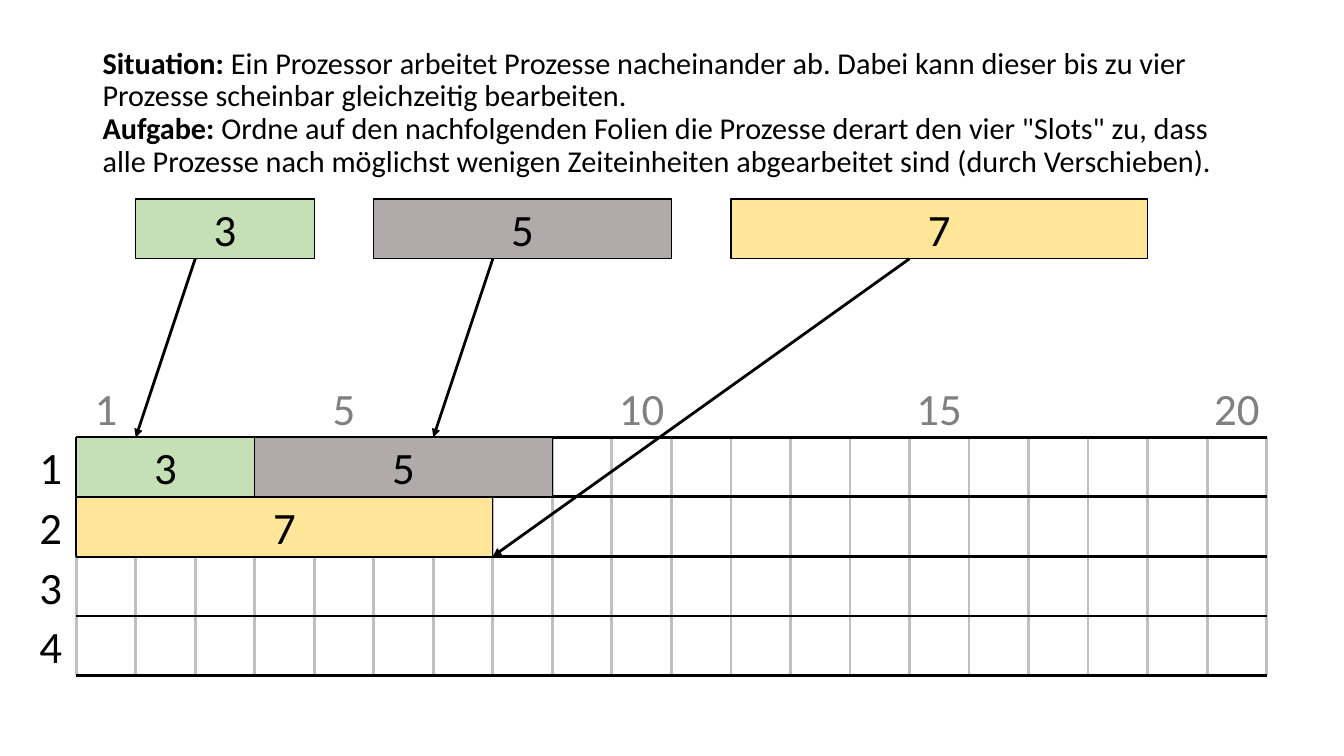
"""Build a slide on scheduling processes into four processor slots."""
from lxml import etree
from pptx import Presentation
from pptx.dml.color import RGBColor
from pptx.enum.shapes import MSO_CONNECTOR, MSO_SHAPE
from pptx.enum.text import MSO_ANCHOR, MSO_AUTO_SIZE, PP_ALIGN
from pptx.oxml.ns import qn
from pptx.util import Cm, Pt

STRAIGHT = MSO_CONNECTOR.STRAIGHT
RECTANGLE = MSO_SHAPE.RECTANGLE
MIDDLE = MSO_ANCHOR.MIDDLE
NO_AUTOFIT = MSO_AUTO_SIZE.NONE
CENTER, LEFT = PP_ALIGN.CENTER, PP_ALIGN.LEFT

BLACK = RGBColor(0x00, 0x00, 0x00)
GRAY = RGBColor(0x80, 0x80, 0x80)
GRID_GRAY = RGBColor(0xBF, 0xBF, 0xBF)
GREEN = RGBColor(0xC5, 0xE0, 0xB4)
YELLOW = RGBColor(0xFF, 0xE6, 0x99)
TAUPE = RGBColor(0xAF, 0xAB, 0xAB)

CELL = Cm(1.5)
GRID_LEFT, GRID_TOP = Cm(1.92), Cm(11.02)
COLUMNS, ROWS = 20, 4


def write(shape, text, size=32, color=BLACK, bold=False, align=CENTER, margin=None, wrap=True):
    frame = shape.text_frame
    frame.auto_size = NO_AUTOFIT
    frame.word_wrap = wrap
    frame.vertical_anchor = MIDDLE
    if margin is not None:
        frame.margin_left = frame.margin_right = margin
        frame.margin_top = frame.margin_bottom = margin
    paragraph = frame.paragraphs[0]
    paragraph.alignment = align
    run = paragraph.add_run()
    run.text = text
    run.font.name = "Calibri"
    run.font.size = Pt(size)
    run.font.bold = bold
    run.font.color.rgb = color


def draw_line(start, end, color=BLACK, arrow=False):
    points = [(GRID_LEFT + column * CELL, GRID_TOP + row * CELL) for column, row in (start, end)]
    connector = slide.shapes.add_connector(STRAIGHT, *points[0], *points[1])
    connector.line.color.rgb = color
    connector.line.width = Pt(2)
    if arrow:
        line = connector.line._get_or_add_ln()
        etree.SubElement(line, qn("a:tailEnd"), type="triangle")
    etree.SubElement(connector._element.spPr, qn("a:effectLst"))


presentation = Presentation()
presentation.slide_width, presentation.slide_height = Cm(33.87), Cm(19.05)
slide = presentation.slides.add_slide(presentation.slide_layouts[5])

for column in range(COLUMNS + 1):
    draw_line((column, ROWS), (column, 0), GRID_GRAY)

for row in range(ROWS):
    label = slide.shapes.add_textbox(Cm(0.53), GRID_TOP + row * CELL, CELL, CELL)
    write(label, str(row + 1), margin=0, wrap=False)

for time_unit in (1, 5, 10, 15, 20):
    label = slide.shapes.add_textbox(
        GRID_LEFT + (time_unit - 2) * CELL, GRID_TOP - CELL, 3 * CELL, CELL)
    write(label, str(time_unit), color=GRAY, margin=0)

for row in range(ROWS + 1):
    draw_line((0, row), (COLUMNS, row))

title = slide.shapes.title
title.left, title.top, title.width, title.height = Cm(2.33), Cm(1.02), Cm(29.21), Cm(3.68)
title_paragraph = title.text_frame.paragraphs[0]
title_paragraph.line_spacing = 0.9
write(title, "Situation:", size=21.6, bold=True, align=LEFT)
write(title, " Ein Prozessor arbeitet Prozesse nacheinander ab. Dabei kann dieser bis zu vier "
      "Prozesse scheinbar gleichzeitig bearbeiten. ", size=21.6, align=LEFT)
title_paragraph.add_line_break()
write(title, "Aufgabe:", size=21.6, bold=True, align=LEFT)
write(title, " Ordne auf den nachfolgenden Folien die Prozesse derart den vier \"Slots\" zu, dass "
      "alle Prozesse nach möglichst wenigen Zeiteinheiten abgearbeitet sind "
      "(durch Verschieben).", size=21.6, align=LEFT)

processes = [
    (1, -4, 3, GREEN), (11, -4, 7, YELLOW), (5, -4, 5, TAUPE),
    (0, 0, 3, GREEN), (0, 1, 7, YELLOW), (3, 0, 5, TAUPE),
]
for column, row, duration, color in processes:
    process = slide.shapes.add_shape(
        RECTANGLE, GRID_LEFT + column * CELL, GRID_TOP + row * CELL, duration * CELL, CELL)
    process.shadow.inherit = False
    process.fill.solid()
    process.fill.fore_color.rgb = color
    process.line.color.rgb = BLACK
    process.line.width = Pt(1)
    write(process, str(duration))

for start, end in [((2, -3), (1, 0)), ((7, -3), (6, 0)), ((14, -3), (7, 2))]:
    draw_line(start, end, arrow=True)

presentation.save("out.pptx")
